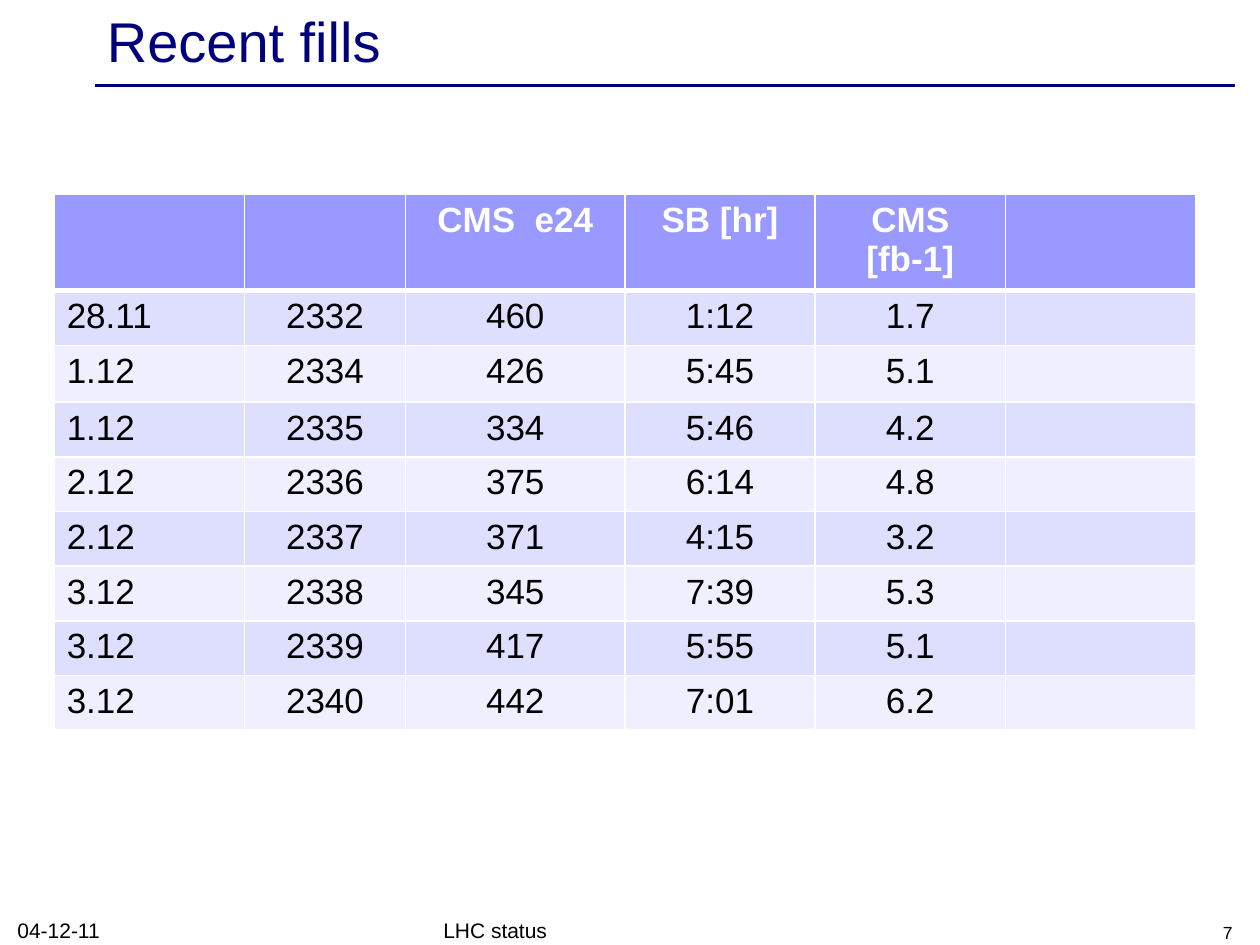
from dataclasses import dataclass

from lxml import etree
from pptx import Presentation
from pptx.dml.color import RGBColor
from pptx.enum import shapes, text
from pptx.oxml import ns
from pptx.util import Inches, Pt

COLORS = {
    "navy": "00007D",
    "black": "000000",
    "white": "FFFFFF",
    "header": "9999FF",
    "odd": "DEDEFF",
    "even": "EFEFFF",
}
FONT = "Arial"
LEFT, CENTER, RIGHT = text.PP_ALIGN.LEFT, text.PP_ALIGN.CENTER, text.PP_ALIGN.RIGHT
MIDDLE, BOTTOM = text.MSO_ANCHOR.MIDDLE, text.MSO_ANCHOR.BOTTOM

COLUMN_WIDTHS = [1.51, 1.28, 1.74, 1.51, 1.51, 1.51]
ROW_HEIGHTS = [0.7, 0.41, 0.45] + [0.41] * 6
FILLS = [
    ["", "", "CMS  e24", "SB [hr]", "CMS [fb-1]", ""],
    ["28.11", "2332", "460", "1:12", "1.7", ""],
    ["1.12", "2334", "426", "5:45", "5.1", ""],
    ["1.12", "2335", "334", "5:46", "4.2", ""],
    ["2.12", "2336", "375", "6:14", "4.8", ""],
    ["2.12", "2337", "371", "4:15", "3.2", ""],
    ["3.12", "2338", "345", "7:39", "5.3", ""],
    ["3.12", "2339", "417", "5:55", "5.1", ""],
    ["3.12", "2340", "442", "7:01", "6.2", ""],
]


@dataclass
class Label:
    words: str
    left: float
    top: float
    width: float
    height: float
    size: int
    color: str = "black"
    align: text.PP_ALIGN = LEFT
    anchor: text.MSO_ANCHOR = BOTTOM


LABELS = [
    Label("Recent fills", 0.75, 0.03, 9, 0.57, 32, "navy", anchor=MIDDLE),
    Label("LHC status", 3.42, 7.25, 3.17, 0.28, 12),
    Label("7", 7.55, 7.25, 2.33, 0.28, 10, align=RIGHT),
    Label("04-12-11", 0.04, 7.24, 2.33, 0.29, 12),
]


def rgb(name: str) -> RGBColor:
    return RGBColor.from_string(COLORS[name])


def style(paragraph, size: int, color: str, align, bold: bool = False) -> None:
    paragraph.alignment = align
    paragraph.font.name = FONT
    paragraph.font.size = Pt(size)
    paragraph.font.bold = bold
    paragraph.font.color.rgb = rgb(color)


def add_label(slide, label: Label) -> None:
    box = slide.shapes.add_textbox(
        Inches(label.left), Inches(label.top), Inches(label.width), Inches(label.height)
    )
    frame = box.text_frame
    frame.word_wrap = True
    frame.vertical_anchor = label.anchor
    frame.text = label.words
    style(frame.paragraphs[0], label.size, label.color, label.align)


def add_rule(slide) -> None:
    rule = slide.shapes.add_connector(
        shapes.MSO_CONNECTOR.STRAIGHT, Inches(0.75), Inches(0.68), Inches(9.8), Inches(0.68)
    )
    rule.line.color.rgb = rgb("navy")
    rule.line.width = Pt(2)
    etree.SubElement(rule.element.spPr, ns.qn("a:effectLst"))


def set_borders(cell, top: int, bottom: int) -> None:
    properties = cell._tc.get_or_add_tcPr()
    for side, width in (("L", 1), ("R", 1), ("T", top), ("B", bottom)):
        line = etree.SubElement(properties, ns.qn(f"a:ln{side}"), w=str(Pt(width)))
        solid = etree.SubElement(line, ns.qn("a:solidFill"))
        etree.SubElement(solid, ns.qn("a:srgbClr"), val=COLORS["white"])


def add_fill_table(slide) -> None:
    table = slide.shapes.add_table(
        len(FILLS), len(COLUMN_WIDTHS), Inches(0.43), Inches(1.54),
        Inches(sum(COLUMN_WIDTHS)), Inches(sum(ROW_HEIGHTS)),
    ).table
    for column, width in zip(table.columns, COLUMN_WIDTHS):
        column.width = Inches(width)
    for r, (values, height) in enumerate(zip(FILLS, ROW_HEIGHTS)):
        table.rows[r].height = Inches(height)
        is_header = r == 0
        band = "header" if is_header else "odd" if r % 2 else "even"
        for c, value in enumerate(values):
            cell = table.cell(r, c)
            set_borders(cell, top=3 if r == 1 else 1, bottom=3 if is_header else 1)
            cell.fill.solid()
            cell.fill.fore_color.rgb = rgb(band)
            cell.text = value
            style(
                cell.text_frame.paragraphs[0], 20, "white" if is_header else "black",
                CENTER if c else LEFT, bold=is_header,
            )


def main() -> None:
    deck = Presentation()
    deck.slide_width, deck.slide_height = Inches(10), Inches(7.5)
    slide = deck.slides.add_slide(deck.slide_layouts[6])
    add_rule(slide)
    for label in LABELS:
        add_label(slide, label)
    add_fill_table(slide)
    deck.save("out.pptx")


if __name__ == "__main__":
    main()
